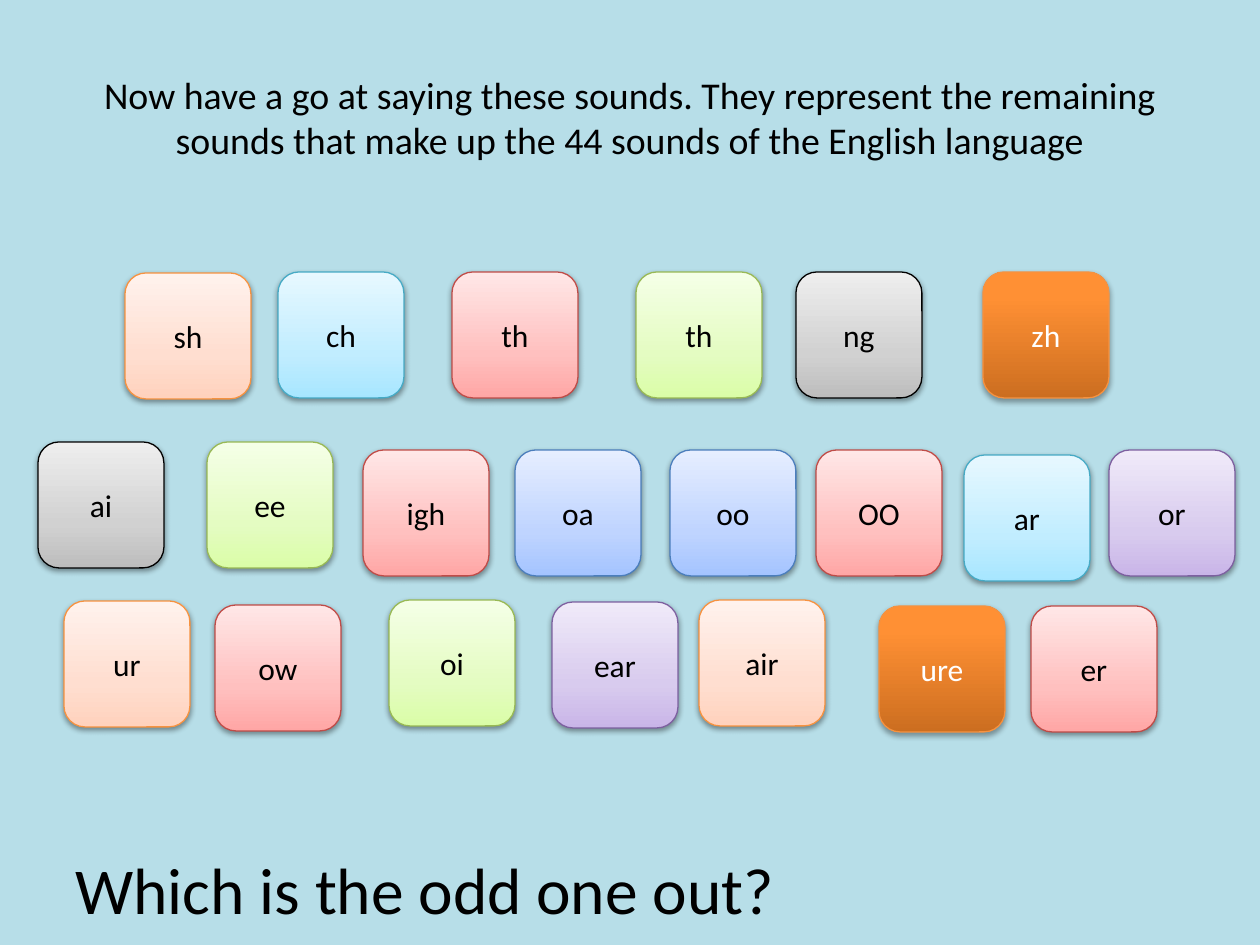
"""Build a slide of English sound tiles with a closing question."""
from copy import deepcopy
from dataclasses import dataclass
from typing import NamedTuple

from lxml.etree import SubElement
from pptx import Presentation
from pptx.dml.color import RGBColor
from pptx.enum.shapes import MSO_SHAPE
from pptx.enum.text import MSO_ANCHOR, PP_ALIGN
from pptx.oxml.ns import qn
from pptx.util import Emu, Pt


class Palette(NamedTuple):
    stops: tuple[tuple[int, str], ...]
    outline: str
    ink: str = "000000"
    shadow_percent: int = 38
    shadow_distance: int = 20000


class Tile(NamedTuple):
    sound: str
    left: int
    top: int
    palette: Palette


def pastel(dark: str, middle: str, light: str, outline: str) -> Palette:
    return Palette(((0, dark), (35, middle), (100, light)), outline)


@dataclass(frozen=True)
class Theme:
    font: str = "Calibri"
    background: str = "B7DEE8"
    ink: str = "000000"
    title_size: float = 21.6
    question_size: float = 37.4
    tile_size: float = 18
    outline_width: float = 0.75
    grey: Palette = pastel("BDBDBD", "D1D1D1", "EEEEEE", "000000")
    blue: Palette = pastel("A4C4FF", "BFD4FF", "E6EEFF", "4B7EBC")
    red: Palette = pastel("FFA6A5", "FFC0BF", "FFE7E7", "BF4C48")
    green: Palette = pastel("DAFDA7", "E4FCC2", "F5FFE7", "98B955")
    purple: Palette = pastel("C9B5E8", "D8CBEE", "F0EAF9", "7D60A0")
    aqua: Palette = pastel("A7E6FF", "C1EDFF", "E7F8FF", "46AAC5")
    peach: Palette = pastel("FFD2BD", "FFDED0", "FFF2ED", "F69240")
    orange: Palette = Palette(
        ((0, "CC6E20"), (80, "FF9034"), (100, "FF9136")), "F69240", "FFFFFF", 35, 23000
    )


THEME = Theme()
PX_PER_INCH = 126
TILE_SIDE = 126
TILES = (
    Tile("sh", 125, 273, THEME.peach),
    Tile("ch", 278, 272, THEME.aqua),
    Tile("th", 452, 272, THEME.red),
    Tile("th", 636, 272, THEME.green),
    Tile("ng", 796, 272, THEME.grey),
    Tile("zh", 983, 272, THEME.orange),
    Tile("ai", 38, 442, THEME.grey),
    Tile("ee", 207, 442, THEME.green),
    Tile("igh", 363, 450, THEME.red),
    Tile("oa", 515, 450, THEME.blue),
    Tile("oo", 670, 450, THEME.blue),
    Tile("OO", 816, 450, THEME.red),
    Tile("ar", 964, 455, THEME.aqua),
    Tile("or", 1109, 450, THEME.purple),
    Tile("ur", 64, 601, THEME.peach),
    Tile("ow", 215, 605, THEME.red),
    Tile("oi", 389, 600, THEME.green),
    Tile("ear", 552, 602, THEME.purple),
    Tile("air", 699, 600, THEME.peach),
    Tile("ure", 879, 606, THEME.orange),
    Tile("er", 1031, 606, THEME.red),
)


def px(length: int) -> Emu:
    return Emu(round(length * 914400 / PX_PER_INCH))


def write(frame, text: str, *, size: float, color: str = THEME.ink,
          align=PP_ALIGN.CENTER, anchor=MSO_ANCHOR.MIDDLE) -> None:
    frame.word_wrap = True
    frame.vertical_anchor = anchor
    paragraph = frame.paragraphs[0]
    paragraph.alignment = align
    run = paragraph.add_run()
    run.text = text
    run.font.name = THEME.font
    run.font.size = Pt(size)
    run.font.color.rgb = RGBColor.from_string(color)


def paint_gradient(shape, palette: Palette) -> None:
    shape.fill.gradient()
    shape.fill.gradient_angle = 90
    stop_list = shape._element.spPr.find(".//" + qn("a:gsLst"))
    stop_list.append(deepcopy(stop_list[0]))
    for stop, (percent, color) in zip(shape.fill.gradient_stops, palette.stops):
        stop.position = percent / 100
        stop.color.rgb = RGBColor.from_string(color)


def cast_shadow(shape, palette: Palette) -> None:
    shape.shadow.inherit = False
    effects = shape._element.spPr.find(qn("a:effectLst"))
    shadow = SubElement(effects, qn("a:outerShdw"), blurRad="40000",
                        dist=str(palette.shadow_distance), dir="5400000", rotWithShape="0")
    black = SubElement(shadow, qn("a:srgbClr"), val="000000")
    SubElement(black, qn("a:alpha"), val=str(palette.shadow_percent * 1000))


def draw_tile(slide, tile: Tile) -> None:
    shape = slide.shapes.add_shape(MSO_SHAPE.ROUNDED_RECTANGLE, px(tile.left), px(tile.top),
                                   px(TILE_SIDE), px(TILE_SIDE))
    paint_gradient(shape, tile.palette)
    shape.line.color.rgb = RGBColor.from_string(tile.palette.outline)
    shape.line.width = Pt(THEME.outline_width)
    cast_shadow(shape, tile.palette)
    write(shape.text_frame, tile.sound, size=THEME.tile_size, color=tile.palette.ink)


def main() -> None:
    deck = Presentation()
    deck.slide_width, deck.slide_height = px(1260), px(945)
    slide = deck.slides.add_slide(deck.slide_layouts[5])
    slide.background.fill.solid()
    slide.background.fill.fore_color.rgb = RGBColor.from_string(THEME.background)

    title = slide.shapes.title
    title.left, title.top, title.width, title.height = px(63), px(38), px(1134), px(158)
    write(title.text_frame,
          "Now have a go at saying these sounds. They represent the remaining "
          "sounds that make up the 44 sounds of the English language",
          size=THEME.title_size)

    question = slide.shapes.add_textbox(px(63), px(843), px(1134), px(92))
    write(question.text_frame, "Which is the odd one out?", size=THEME.question_size,
          align=PP_ALIGN.LEFT, anchor=MSO_ANCHOR.TOP)

    for tile in TILES:
        draw_tile(slide, tile)
    deck.save("out.pptx")


if __name__ == "__main__":
    main()
